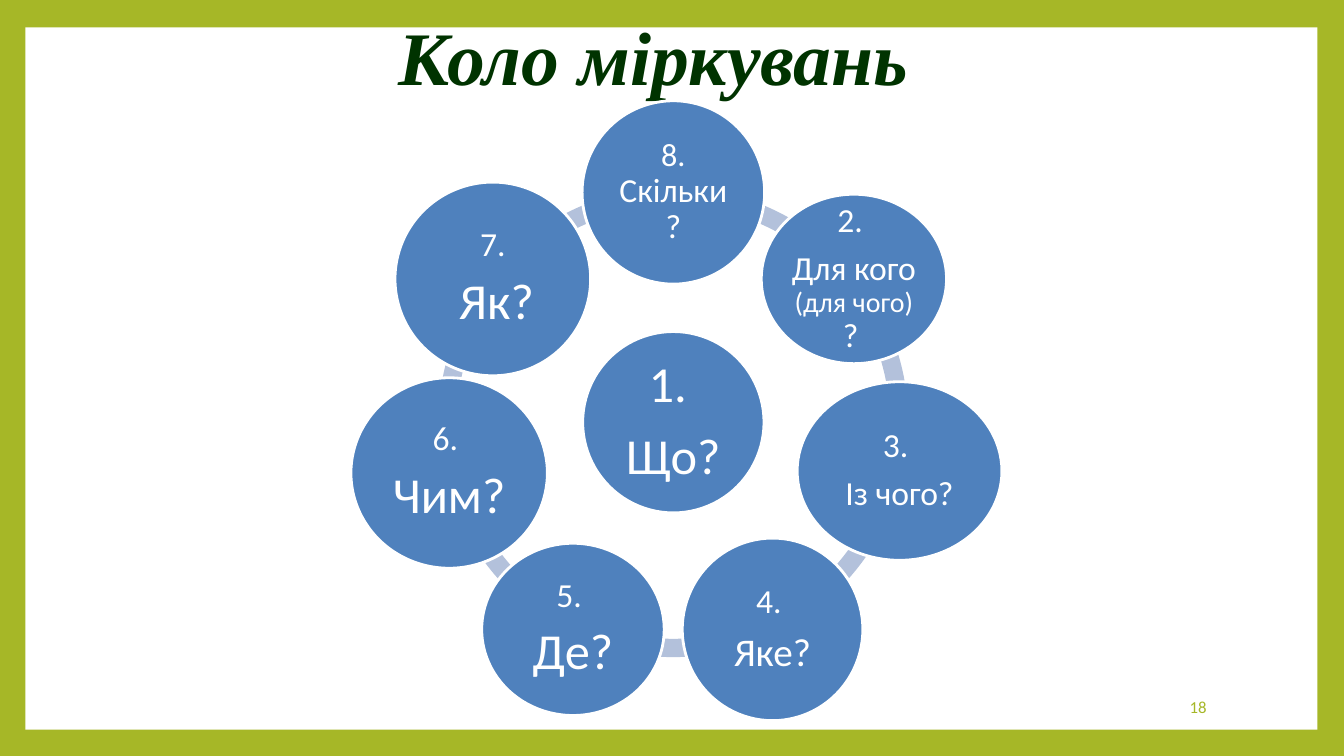
import pptx
import pptx.util
import pptx.dml.color
import pptx.enum.shapes
import pptx.enum.text

Cm = pptx.util.Cm
Pt = pptx.util.Pt
SHAPE = pptx.enum.shapes.MSO_SHAPE
ALIGN = pptx.enum.text.PP_ALIGN
MIDDLE = pptx.enum.text.MSO_ANCHOR.MIDDLE

GREEN, WHITE, BLUE, PALE, DARK = "A6B727", "FFFFFF", "4F81BD", "B3C1DB", "003300"
ARC_COUNT = 7
TURN = 216

QUESTIONS = [
    (0, 0, 4.57, 4.57, [[("1. ", 36)], [("Що?", 36)]]),
    (0, -5.79, 4.6, 4.62, [[("8. ", 23), ("Скільки?", 24)]]),
    (4.55, -3.61, 4.67, 4.27, [[("2. ", 24)], [("Для кого ", 24), ("(для чого) ", 20), ("?", 24), (" ", 20)]]),
    (5.7, 1.23, 5.16, 4.5, [[("3. ", 24)], [("Із чого?", 24)]]),
    (2.5, 5.22, 4.55, 4.6, [[("4. ", 24)], [("Яке?", 28)]]),
    (-2.53, 5.22, 4.6, 4.34, [[("5. ", 24)], [("Де?", 36)]]),
    (-5.65, 1.28, 4.95, 4.8, [[("6. ", 24)], [("Чим?", 36)]]),
    (-4.55, -3.61, 4.93, 4.88, [[("7.", 24)], [(" ", 24), ("Як?", 36)]]),
]


def paint(target, color):
    target.solid()
    target.fore_color.rgb = pptx.dml.color.RGBColor.from_string(color)


def style(span, size, color, font="Calibri"):
    span.font.size = Pt(size)
    span.font.name = font
    paint(span.font.fill, color)


def add_plain(page, kind, box, color):
    shape = page.shapes.add_shape(kind, *[Cm(length) for length in box])
    shape.shadow.inherit = False
    paint(shape.fill, color)
    shape.line.fill.background()
    return shape


def add_title(page, box):
    title = page.shapes.title
    title.left, title.top, title.width, title.height = [Cm(length) for length in box]
    frame = title.text_frame
    frame.text = "Коло міркувань"
    frame.auto_size = pptx.enum.text.MSO_AUTO_SIZE.NONE
    frame.vertical_anchor = MIDDLE
    para = frame.paragraphs[0]
    para.alignment = ALIGN.CENTER
    para.line_spacing = 0.9
    span = para.runs[0]
    style(span, 54, DARK, "Times New Roman")
    span.font.bold = span.font.italic = True


def add_circle(page, box, inset, paragraphs):
    circle = add_plain(page, SHAPE.OVAL, box, BLUE)
    paint(circle.line.fill, WHITE)
    circle.line.width = Pt(2)
    frame = circle.text_frame
    frame.word_wrap = True
    frame.vertical_anchor = MIDDLE
    frame.margin_left = frame.margin_right = Cm(inset)
    frame.margin_top = frame.margin_bottom = Cm(inset)
    for index, spans in enumerate(paragraphs):
        para = frame.add_paragraph() if index else frame.paragraphs[0]
        para.alignment = ALIGN.CENTER
        para.line_spacing = 0.9
        para.space_after = Pt(0.35 * spans[0][1])
        for words, size in spans:
            span = para.add_run()
            span.text = words
            style(span, size, WHITE)


def add_question_ring(page, box):
    left, top, width, height = box
    step = TURN / ARC_COUNT
    for index in range(ARC_COUNT):
        arc = add_plain(page, SHAPE.BLOCK_ARC, box, PALE)
        start = 162 + index * step
        arc.adjustments[0] = start % TURN
        arc.adjustments[1] = (start + step) % TURN
        arc.adjustments[2] = 0.039
    for across, down, wide, high, paragraphs in QUESTIONS:
        place = (left + width / 2 + across - wide / 2, top + height / 2 + down - high / 2, wide, high)
        add_circle(page, place, 0.08 if across or down else 0.13, paragraphs)


def add_page_number(page, box):
    number = page.shapes.add_textbox(*[Cm(length) for length in box])
    frame = number.text_frame
    frame.text = "18"
    frame.word_wrap = True
    frame.vertical_anchor = MIDDLE
    para = frame.paragraphs[0]
    para.alignment = ALIGN.RIGHT
    style(para.runs[0], 12, GREEN)


def main():
    deck = pptx.Presentation()
    deck.slide_width, deck.slide_height = Cm(33.87), Cm(19.05)
    page = deck.slides.add_slide(deck.slide_layouts[5])
    paint(page.background.fill, GREEN)
    panel = add_plain(page, SHAPE.RECTANGLE, (0.64, 0.69, 32.56, 17.7), WHITE)
    page.shapes.title.element.addprevious(panel.element)
    add_title(page, (1.32, 0.56, 30.3, 1.96))
    add_question_ring(page, (11.05, 4.72, 11.84, 11.84))
    add_page_number(page, (25.91, 17.3, 4.75, 1.02))
    deck.save("out.pptx")


if __name__ == "__main__":
    main()
